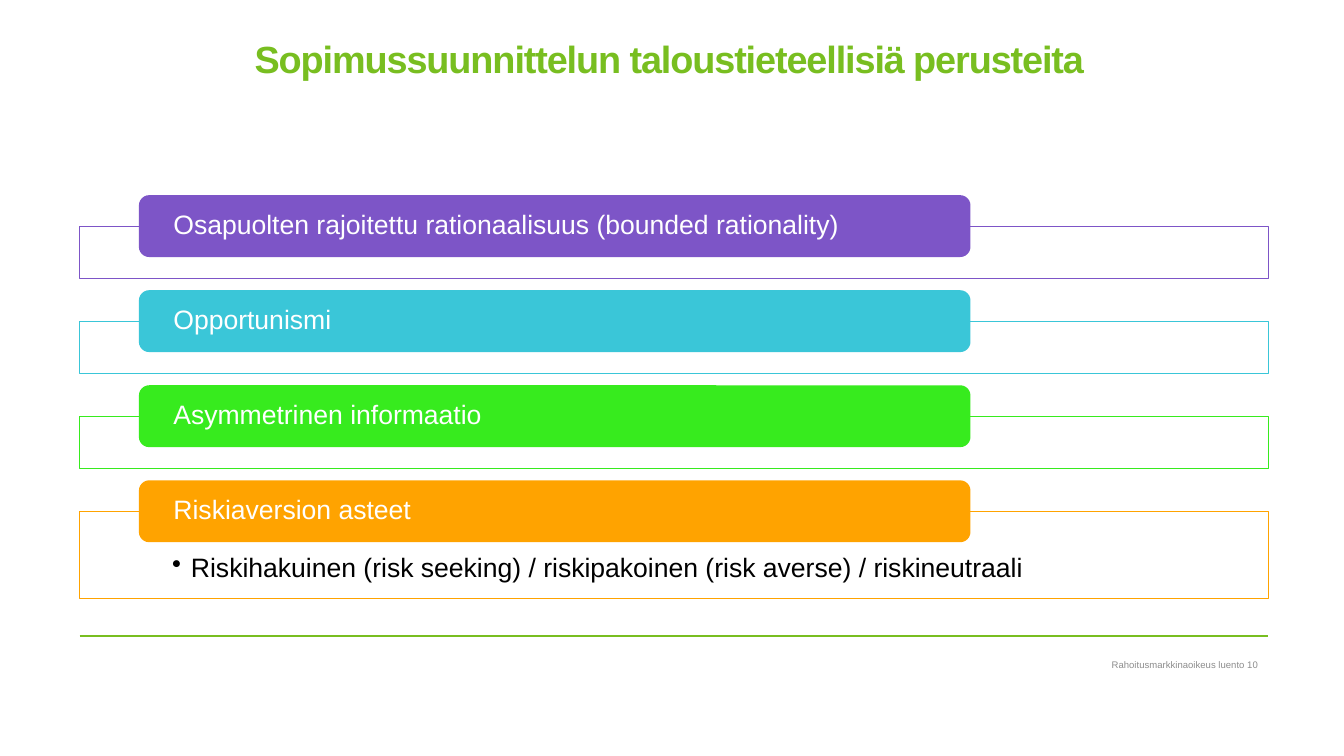
from dataclasses import dataclass

from lxml import etree
from pptx import Presentation
from pptx.dml.color import RGBColor
from pptx.enum import shapes, text
from pptx.oxml import ns
from pptx.util import Pt


@dataclass(frozen=True)
class Theme:
    font: str = "Arial"
    title_size: float = 27
    body_size: float = 19
    footer_size: float = 6.8
    green: str = "78BE20"
    white: str = "FFFFFF"
    black: str = "000000"
    grey: str = "8C8C8C"


THEME = Theme()
LEFT, WIDTH = 56.9, 849
FIRST_BAR_TOP, PITCH = 139.4, 67.9
BAR_LEFT, BAR_WIDTH, BAR_HEIGHT = 99.2, 594, 44.2
FRAME_DROP, FRAME_HEIGHT, DETAIL_FRAME_HEIGHT = 22.15, 37.3, 62.5

TITLE = "Sopimussuunnittelun taloustieteellisiä perusteita"
FOOTER = "Rahoitusmarkkinaoikeus luento 10"
TOPICS = [
    ("Osapuolten rajoitettu rationaalisuus (bounded rationality)", "7D55C7", None),
    ("Opportunismi", "3AC6D8", None),
    ("Asymmetrinen informaatio", "37EB1E", None),
    ("Riskiaversion asteet", "FFA300",
     "Riskihakuinen (risk seeking) / riskipakoinen (risk averse) / riskineutraali"),
]


def rgb(color):
    return RGBColor.from_string(color)


def add_xml(parent, tag, **attributes):
    return etree.SubElement(parent, ns.qn(tag), attributes)


def write_text(box, words, size, color, insets, anchor, align, spacing=1.0, bold=False, bullet=None):
    """Fill a shape with one paragraph; insets run left, top, right, bottom."""
    frame = box.text_frame
    frame.word_wrap = True
    frame.auto_size = text.MSO_AUTO_SIZE.NONE
    frame.vertical_anchor = anchor
    frame.margin_left, frame.margin_top, frame.margin_right, frame.margin_bottom = map(Pt, insets)
    para = frame.paragraphs[0]
    span = para.add_run()
    span.text = words
    if bullet:
        properties = para._p.get_or_add_pPr()
        properties.set("marL", str(Pt(13.5)))
        properties.set("indent", str(Pt(-13.5)))
        add_xml(properties, "a:buChar", char=bullet)
    para.alignment = align
    para.line_spacing = spacing
    para.font.name = THEME.font
    para.font.size = Pt(size)
    para.font.bold = bold
    para.font.color.rgb = rgb(color)
    return span


def add_box(page, kind, left, top, width, height, fill, line=None):
    box = page.shapes.add_shape(kind, Pt(left), Pt(top), Pt(width), Pt(height))
    box.shadow.inherit = False
    box.fill.solid()
    box.fill.fore_color.rgb = rgb(fill)
    if line:
        box.line.color.rgb = rgb(line)
        box.line.width = Pt(0.75)
    else:
        box.line.fill.background()
    return box


def add_title(page):
    title = page.shapes.title
    title.left, title.top, title.width, title.height = Pt(LEFT), Pt(30.2), Pt(WIDTH), Pt(94.3)
    span = write_text(title, TITLE, THEME.title_size, THEME.green, (0, 0, 7, 0),
                      text.MSO_ANCHOR.TOP, text.PP_ALIGN.CENTER, 0.85, bold=True)
    span._r.get_or_add_rPr().set("spc", "-80")


def add_topic(page, top, label, color, detail):
    # Outlined frame behind the bar
    height = DETAIL_FRAME_HEIGHT if detail else FRAME_HEIGHT
    frame = add_box(page, shapes.MSO_SHAPE.RECTANGLE, LEFT, top + FRAME_DROP, WIDTH, height,
                    THEME.white, color)
    fill_color = frame._element.spPr.find(ns.qn("a:solidFill"))[0]
    add_xml(fill_color, "a:alpha", val="90000")
    if detail:
        write_text(frame, detail, THEME.body_size, THEME.black, (66, 31, 66, 11),
                   text.MSO_ANCHOR.TOP, text.PP_ALIGN.LEFT, 0.9, bullet="•")
    # Coloured bar with the topic
    bar = add_box(page, shapes.MSO_SHAPE.ROUNDED_RECTANGLE, BAR_LEFT, top, BAR_WIDTH, BAR_HEIGHT, color)
    write_text(bar, label, THEME.body_size, THEME.white, (22.5, 0, 22.5, 0),
               text.MSO_ANCHOR.MIDDLE, text.PP_ALIGN.LEFT, 0.9)


def add_rule(page, top):
    rule = page.shapes.add_connector(shapes.MSO_CONNECTOR.STRAIGHT,
                                     Pt(LEFT), Pt(top), Pt(LEFT + WIDTH), Pt(top))
    rule.line.color.rgb = rgb(THEME.green)
    rule.line.width = Pt(1)
    add_xml(rule._element.spPr, "a:effectLst")


def add_footer(page):
    box = page.shapes.add_textbox(Pt(518.4), Pt(468.7), Pt(380.2), Pt(12.2))
    write_text(box, FOOTER, THEME.footer_size, THEME.grey, (7.2, 3.6, 0, 3.6),
               text.MSO_ANCHOR.MIDDLE, text.PP_ALIGN.RIGHT)


def main():
    deck = Presentation()
    deck.slide_width, deck.slide_height = Pt(960), Pt(540)
    page = deck.slides.add_slide(deck.slide_layouts.get_by_name("Title Only"))
    add_rule(page, 454.3)
    add_title(page)
    for index, topic in enumerate(TOPICS):
        add_topic(page, FIRST_BAR_TOP + index * PITCH, *topic)
    add_footer(page)
    deck.save("out.pptx")


if __name__ == "__main__":
    main()
